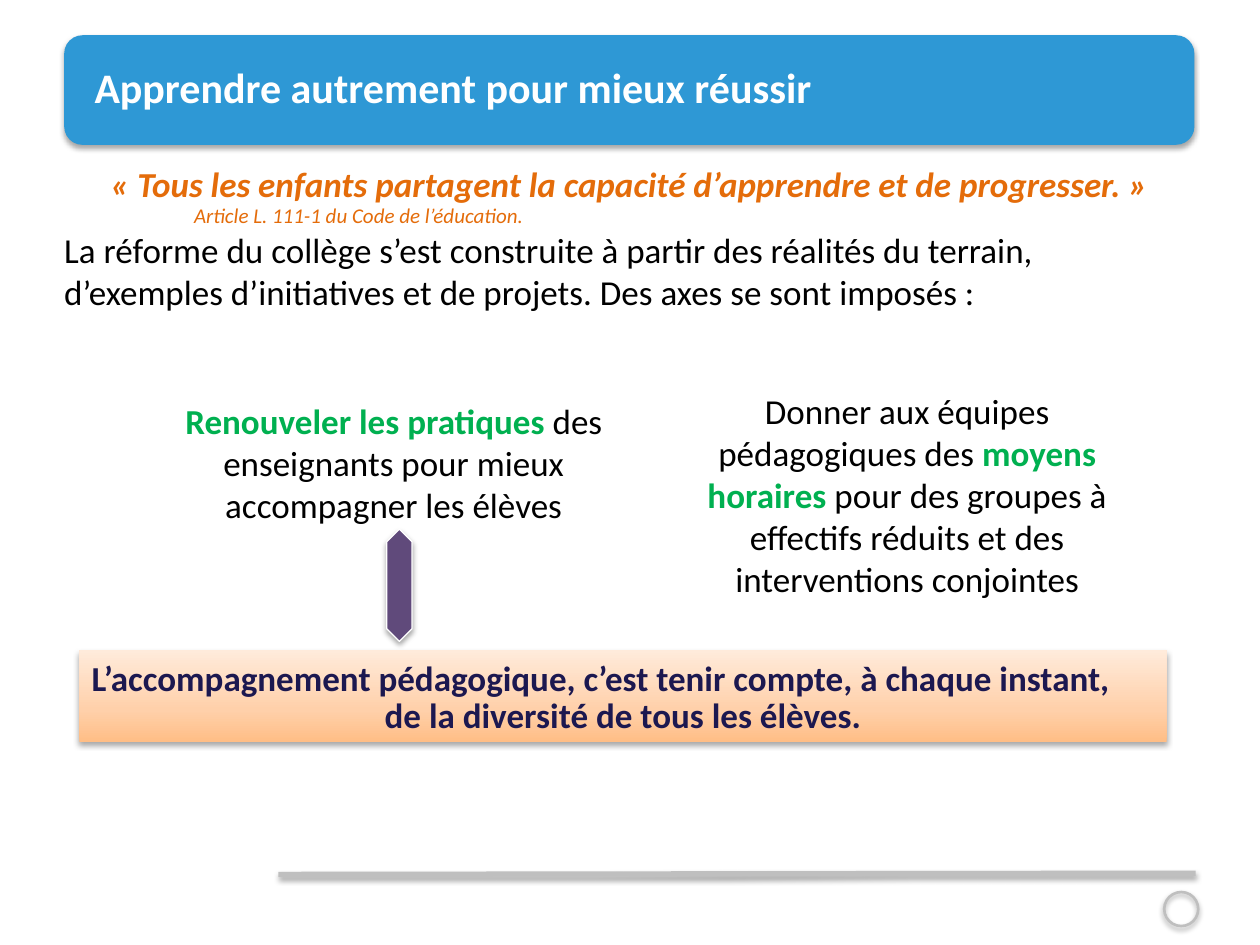
from copy import deepcopy

from lxml import etree
from pptx import Presentation
from pptx.dml.color import RGBColor
from pptx.enum.shapes import MSO_CONNECTOR, MSO_SHAPE
from pptx.enum.text import MSO_ANCHOR, MSO_AUTO_SIZE, PP_ALIGN
from pptx.oxml import parse_xml
from pptx.oxml.ns import nsdecls, qn
from pptx.util import Inches, Pt

LEFT, CENTER = PP_ALIGN.LEFT, PP_ALIGN.CENTER
TOP, MIDDLE = MSO_ANCHOR.TOP, MSO_ANCHOR.MIDDLE
NO_FIT = MSO_AUTO_SIZE.NONE
ROUNDED, OVAL = MSO_SHAPE.ROUNDED_RECTANGLE, MSO_SHAPE.OVAL
RECT, DOUBLE_ARROW = MSO_SHAPE.RECTANGLE, MSO_SHAPE.UP_DOWN_ARROW
STRAIGHT = MSO_CONNECTOR.STRAIGHT

COLORS = {
    "banner": "2E98D5", "rule": "BFBFBF", "white": "FFFFFF", "black": "000000",
    "quote": "E46C0A", "key": "00B050", "navy": "1C1850", "arrow": "604A7B",
}
PEACH = [(0, "FFBE86"), (0.35, "FFD0AA"), (1, "FFEBDB")]
BOX_INSETS = (0.1, 0.05, 0.1, 0.05)


def rgb(name):
    return RGBColor.from_string(COLORS[name])


class SlideBuilder:
    """Holds the text style and the slide being filled."""

    font, size = "Calibri", 20

    def __init__(self, slide):
        self.slide = slide

    def run(self, p, text, color="black", size=None, bold=False, italic=False):
        r = p.add_run()
        r.text = text
        r.font.name, r.font.size = self.font, Pt(size or self.size)
        r.font.bold, r.font.italic = bold, italic
        r.font.color.rgb = rgb(color)

    def frame(self, sp, insets=BOX_INSETS, anchor=TOP):
        tf = sp.text_frame
        tf.word_wrap, tf.auto_size, tf.vertical_anchor = True, NO_FIT, anchor
        (tf.margin_left, tf.margin_top,
         tf.margin_right, tf.margin_bottom) = map(Inches, insets)
        return tf

    def placeholder(self, sp, box, anchor=TOP):
        """Place a template placeholder in front of what is already drawn."""
        sp.left, sp.top, sp.width, sp.height = map(Inches, box)
        self.slide.shapes._spTree.append(sp._element)
        return self.frame(sp, (0, 0, 0, 0), anchor)

    def plain_paragraph(self, p, align=LEFT, spacing=1.0, indent=0):
        """Strip the template's bullet, hanging indent and spacing."""
        pPr = p._p.get_or_add_pPr()
        pPr.set("marL", str(Inches(indent)))
        pPr.set("indent", "0")
        etree.SubElement(pPr, qn("a:buNone"))
        p.alignment, p.line_spacing, p.space_before = align, spacing, Pt(0)

    def text_box(self, box, runs):
        sp = self.slide.shapes.add_textbox(*map(Inches, box))
        p = self.frame(sp).paragraphs[0]
        p.alignment = CENTER
        for text, style in runs:
            self.run(p, text, **style)

    def shadow(self, sp, opacity=35):
        sp._element.spPr.append(parse_xml(
            f'<a:effectLst {nsdecls("a")}><a:outerShdw blurRad="{Pt(3.1)}" '
            f'dist="{Pt(1.8)}" dir="5400000" rotWithShape="0">'
            f'<a:srgbClr val="{COLORS["black"]}"><a:alpha val="{opacity * 1000}"/>'
            '</a:srgbClr></a:outerShdw></a:effectLst>'))

    def shape(self, kind, box, fill=None, line=None, width=1.0, adjust=()):
        sp = self.slide.shapes.add_shape(kind, *map(Inches, box))
        for i, value in enumerate(adjust):
            sp.adjustments[i] = value
        if fill is None:
            sp.fill.background()
        elif isinstance(fill, list):
            self.gradient(sp, fill)
        else:
            sp.fill.solid()
            sp.fill.fore_color.rgb = rgb(fill)
        if line:
            sp.line.color.rgb, sp.line.width = rgb(line), Pt(width)
        else:
            sp.line.fill.background()
        self.shadow(sp)
        return sp

    def gradient(self, sp, stops):
        """Fill from bottom to top with (position, hex) stops."""
        sp.fill.gradient()
        sp.fill.gradient_angle = 90
        gs_list = sp._element.spPr.find(".//" + qn("a:gsLst"))
        while len(gs_list) < len(stops):
            gs_list.append(deepcopy(gs_list[0]))
        for stop, (position, color) in zip(sp.fill.gradient_stops, stops):
            stop.position = position
            stop.color.rgb = RGBColor.from_string(color)

    def line(self, start, end, color, width):
        cn = self.slide.shapes.add_connector(STRAIGHT, *map(Inches, start + end))
        cn.line.color.rgb, cn.line.width = rgb(color), Pt(width)
        self.shadow(cn, 38)


def main():
    prs = Presentation()
    prs.slide_width, prs.slide_height = Inches(10), Inches(7.5)
    slide = prs.slides.add_slide(prs.slide_layouts[1])
    s = SlideBuilder(slide)

    s.shape(ROUNDED, (0.51, 0.28, 8.97, 0.87), "banner", adjust=[0.167])
    s.line((2.21, 6.94), (9.49, 6.93), "rule", 3)
    s.shape(OVAL, (9.24, 7.08, 0.27, 0.27), line="rule", width=1.5)

    tf = s.placeholder(slide.shapes.title, (0.75, 0.18, 8.74, 1.02), MIDDLE)
    tf.paragraphs[0].alignment = LEFT
    s.run(tf.paragraphs[0], "Apprendre autrement pour mieux réussir", "white", 24, True)

    tf = s.placeholder(slide.placeholders[1], (0.51, 1.33, 8.97, 1.3))
    quote, source, intro = tf.paragraphs[0], tf.add_paragraph(), tf.add_paragraph()
    s.plain_paragraph(quote, CENTER, 0.9)
    s.run(quote, "« Tous les enfants partagent la capacité d’apprendre et de progresser. »",
          "quote", bold=True, italic=True)
    s.plain_paragraph(source, spacing=0.9, indent=1.03)
    s.run(source, "Article L. 111-1 du Code de l’éducation.", "quote", 12, italic=True)
    s.plain_paragraph(intro)
    s.run(intro, "La réforme du collège s’est construite à partir des réalités du terrain, "
                 "d’exemples d’initiatives et de projets. Des axes se sont imposés :")

    key = {"color": "key", "bold": True}
    s.text_box((5.47, 3.04, 3.46, 1.77), [
        ("Donner aux équipes pédagogiques des ", {}),
        ("moyens horaires", key),
        (" pour des groupes à effectifs réduits et des interventions conjointes", {}),
    ])
    s.text_box((1.19, 3.12, 3.87, 1.1), [
        ("Renouveler les pratiques", key),
        (" des enseignants pour mieux accompagner les élèves", {}),
    ])

    sp = s.shape(RECT, (0.63, 5.16, 8.63, 0.73), PEACH)
    tf = s.frame(sp, anchor=MIDDLE)
    first, second = tf.paragraphs[0], tf.add_paragraph()
    first.alignment, second.alignment = LEFT, CENTER
    second.line_spacing = 0.9
    s.run(first, "L’accompagnement pédagogique, c’est tenir compte, à chaque instant,",
          "navy", bold=True)
    s.run(second, "de la diversité de tous les élèves.", "navy", bold=True)

    s.shape(DOUBLE_ARROW, (3.07, 4.2, 0.2, 0.89), "arrow", "white", 0.75, [0.204, 1.05])

    prs.save("out.pptx")


if __name__ == "__main__":
    main()
